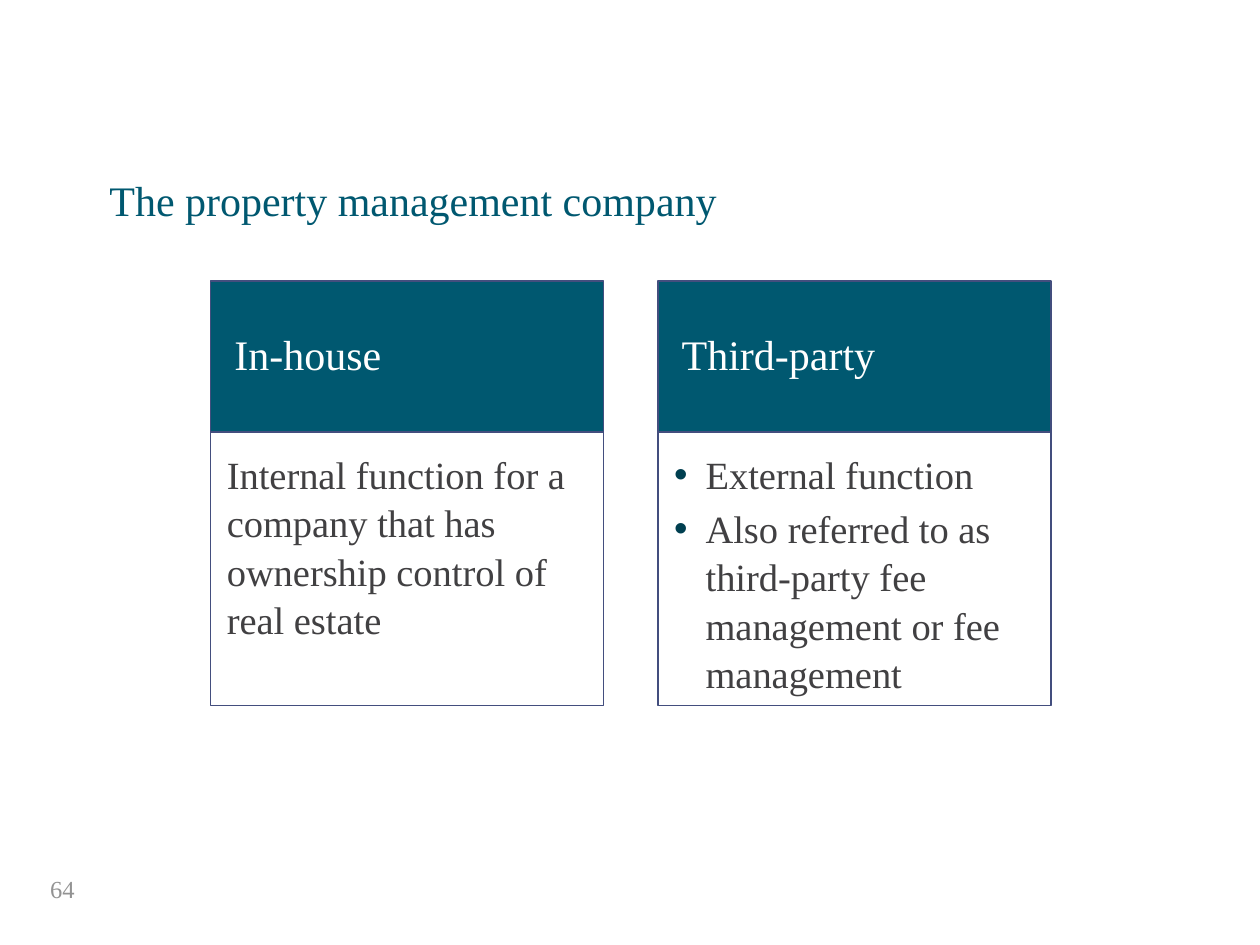
from dataclasses import dataclass

from lxml import etree
from pptx import Presentation
from pptx import util as u
from pptx.dml.color import RGBColor
from pptx.enum import shapes, text
from pptx.oxml.ns import qn


@dataclass(frozen=True)
class Theme:
    font: str = "Times New Roman"
    teal: str = "005870"
    edge: str = "434E7E"
    dot: str = "003F50"
    ink: str = "414042"
    pale: str = "FFFFFF"
    gray: str = "939393"
    head: int = 24
    body: int = 22
    foot: int = 14


THEME = Theme()
MID = text.MSO_ANCHOR.MIDDLE
TOP = text.MSO_ANCHOR.TOP


def color(code):
    return RGBColor.from_string(code)


def write(shape, lines, size, ink, anchor=MID, pads=(0.1, 0.05, 0.1, 0.05),
          pitch=1.0, gap=0, dots=False):
    frame = shape.text_frame
    frame.word_wrap = True
    frame.vertical_anchor = anchor
    (frame.margin_left, frame.margin_top,
     frame.margin_right, frame.margin_bottom) = map(u.Inches, pads)
    frame.text = "\n".join(lines)
    for para in frame.paragraphs:
        para.alignment = text.PP_ALIGN.LEFT
        para.line_spacing = pitch
        para.space_after = u.Pt(gap)
        if dots:
            add_dot(para)
        for run in para.runs:
            run.font.name = THEME.font
            run.font.size = u.Pt(size)
            run.font.color.rgb = color(ink)


def add_dot(para):
    props = para._p.get_or_add_pPr()
    props.set("marL", str(u.Inches(0.25)))
    props.set("indent", str(-u.Inches(0.25)))
    tint = etree.SubElement(props, qn("a:buClr"))
    etree.SubElement(tint, qn("a:srgbClr"), val=THEME.dot)
    etree.SubElement(props, qn("a:buFont"), typeface="Arial")
    etree.SubElement(props, qn("a:buChar"), char="•")


def add_label(slide, box, label, size, ink, pitch=1.0):
    shape = slide.shapes.add_textbox(*map(u.Inches, box))
    write(shape, [label], size, ink, pitch=pitch)


def add_panel(slide, box, fill=None):
    shape = slide.shapes.add_shape(
        shapes.MSO_SHAPE.RECTANGLE, *map(u.Inches, box))
    shape.shadow.inherit = False
    if fill:
        shape.fill.solid()
        shape.fill.fore_color.rgb = color(fill)
    else:
        shape.fill.background()
    shape.line.color.rgb = color(THEME.edge)
    shape.line.width = u.Pt(1)
    return shape


def add_card(slide, box, title, lines):
    left, top, width, height = box
    cap = 1.2
    head = add_panel(slide, (left, top, width, cap), THEME.teal)
    write(head, [title], THEME.head, THEME.pale,
          pads=(0.19, 0.11, 0.19, 0.11), pitch=0.9)
    body = add_panel(slide, (left, top + cap, width, height - cap))
    write(body, lines, THEME.body, THEME.ink, TOP,
          pads=(0.13, 0.13, 0.17, 0.19), pitch=1.05, gap=3.3,
          dots=len(lines) > 1)


def add_cards(slide, box, cards):
    left, top, width, height = box
    gap = 0.43
    wide = (width - gap * (len(cards) - 1)) / len(cards)
    for index, (title, lines) in enumerate(cards):
        add_card(slide, (left + index * (wide + gap), top, wide, height),
                 title, lines)


def main():
    deck = Presentation()
    deck.slide_width, deck.slide_height = u.Inches(10), u.Inches(7.5)
    slide = deck.slides.add_slide(deck.slide_layouts[6])
    add_label(slide, (0.77, 1.33, 7.14, 0.56),
              "The property management company", THEME.head, THEME.teal, 0.9)
    add_cards(slide, (1.67, 2.23, 6.67, 3.37), [
        ("In-house", ["Internal function for a company that has "
                      "ownership control of real estate"]),
        ("Third-party", ["External function",
                         "Also referred to as third-party fee "
                         "management or fee management"]),
    ])
    add_label(slide, (0.3, 6.85, 2.25, 0.4), "64", THEME.foot, THEME.gray)
    deck.save("out.pptx")


if __name__ == "__main__":
    main()
